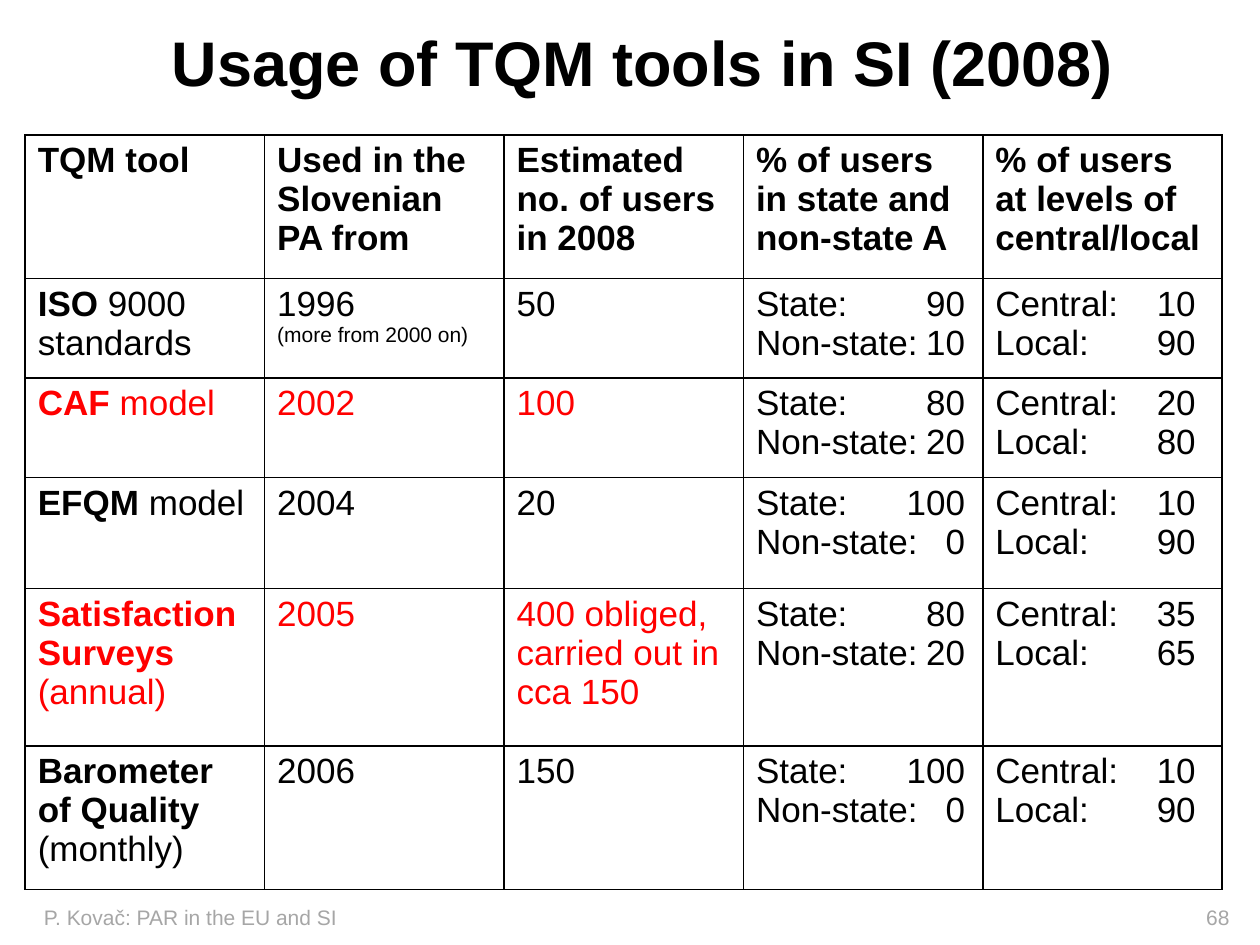
"""Build the slide on usage of TQM tools in Slovenia."""
from dataclasses import dataclass

from lxml import etree
from pptx import Presentation
from pptx.dml.color import RGBColor
from pptx.enum.text import MSO_ANCHOR, PP_ALIGN
from pptx.oxml.ns import qn
from pptx.slide import Slide
from pptx.util import Inches, Pt

CENTER = PP_ALIGN.CENTER
LEFT = PP_ALIGN.LEFT
MIDDLE = MSO_ANCHOR.MIDDLE
WIDTH, HEIGHT = 10, 7.5
COLORS = {"black": "000000", "red": "FF0000", "grey": "A6A6A6", "white": "FFFFFF"}
ROW_HEIGHTS = [1.14, 0.79, 0.79, 0.88, 1.25, 1.14]
HEADERS = [
    "*TQM tool*",
    "*Used in the*\n*Slovenian*\n*PA from*",
    "*Estimated*\n*no. of users*\n*in 2008*",
    "*% of users*\n*in state and*\n*non-state A*",
    "*% of users*\n*at levels of*\n*central/local*",
]
TOOLS = [
    ("*ISO* 9000\nstandards", "1996\n(more from 2000 on)", "50", 90, 10, 10, 90, "black"),
    ("*CAF* model", "2002", "100", 80, 20, 20, 80, "red"),
    ("*EFQM* model", "2004", "20", 100, 0, 10, 90, "black"),
    ("*Satisfaction*\n*Surveys*\n(annual)", "2005",
     "400 obliged,\ncarried out in\ncca 150", 80, 20, 35, 65, "red"),
    ("*Barometer*\n*of Quality*\n(monthly)", "2006", "150", 100, 0, 10, 90, "black"),
]


@dataclass
class SlideBuilder:
    """Hold the style and the current slide, and draw its elements."""

    slide: Slide
    font: str = "Arial"
    body_size: int = 20
    small_size: int = 12

    def fill_paragraph(self, paragraph, text, size, color, tab=None):
        """Fill a paragraph, with bold between asterisks and an optional right tab."""
        for index, part in enumerate(text.split("*")):
            if part:
                run = paragraph.add_run()
                run.text = part
                run.font.name = self.font
                run.font.size = Pt(size)
                run.font.bold = index % 2 == 1
                run.font.color.rgb = RGBColor.from_string(COLORS[color])
        if tab:
            tabs = etree.SubElement(paragraph._p.get_or_add_pPr(), qn("a:tabLst"))
            etree.SubElement(tabs, qn("a:tab"), pos=str(Inches(tab)), algn="r")

    def text(self, left, top, width, height, text, size, color, align=LEFT, tab=None):
        """Add a one-line text box placed by shares of the slide."""
        box = self.slide.shapes.add_textbox(
            Inches(left * WIDTH), Inches(top * HEIGHT),
            Inches(width * WIDTH), Inches(height * HEIGHT))
        frame = box.text_frame
        frame.word_wrap = True
        frame.vertical_anchor = MIDDLE
        frame.paragraphs[0].alignment = align
        self.fill_paragraph(frame.paragraphs[0], text, size, color, tab)

    def border(self, cell):
        """Draw a thin black line on each side of a cell."""
        properties = cell._tc.get_or_add_tcPr()
        for index, side in enumerate(("lnL", "lnR", "lnT", "lnB")):
            line = etree.Element(qn(f"a:{side}"), w=str(Pt(1)))
            fill = etree.SubElement(line, qn("a:solidFill"))
            etree.SubElement(fill, qn("a:srgbClr"), val=COLORS["black"])
            properties.insert(index, line)

    def cell(self, cell, text, color, tab=None):
        """Fill a table cell, one paragraph per line."""
        cell.fill.solid()
        cell.fill.fore_color.rgb = RGBColor.from_string(COLORS["white"])
        self.border(cell)
        frame = cell.text_frame
        for index, line in enumerate(text.split("\n")):
            paragraph = frame.add_paragraph() if index else frame.paragraphs[0]
            size = self.small_size if line.startswith("(more") else self.body_size
            self.fill_paragraph(paragraph, line, size, color, tab)

    def table(self, left, top, width, row_heights, rows):
        """Add a table with equal columns from rows of (text, color, tab)."""
        columns = len(rows[0])
        table = self.slide.shapes.add_table(
            len(rows), columns, Inches(left * WIDTH), Inches(top * HEIGHT),
            Inches(width * WIDTH), Inches(sum(row_heights))).table
        table.first_row = table.horz_banding = False
        for table_row, height, row in zip(table.rows, row_heights, rows):
            table_row.height = Inches(height)
            for cell, content in zip(table_row.cells, row):
                self.cell(cell, *content)


def tool_row(name, year, users, state, non_state, central, local, color):
    """Return the cells of one tool."""
    return [
        (name, color), (year, color), (users, color),
        (f"State:\t{state}\nNon-state:\t{non_state}", "black", 1.66),
        (f"Central:\t{central}\nLocal:\t{local}", "black", 1.59),
    ]


def main():
    """Build and save the presentation."""
    presentation = Presentation()
    presentation.slide_width = Inches(WIDTH)
    presentation.slide_height = Inches(HEIGHT)
    builder = SlideBuilder(presentation.slides.add_slide(presentation.slide_layouts[6]))
    builder.text(0.04, 0.02, 0.94, 0.09, "*Usage of TQM tools in SI (2008)*",
                 36, "black", CENTER)
    rows = [[(header, "black") for header in HEADERS]]
    rows += [tool_row(*tool) for tool in TOOLS]
    builder.table(0.02, 1.07 / HEIGHT, 0.95, ROW_HEIGHTS, rows)
    builder.text(0.25 / WIDTH, 0.94, 0.97, 0.06, "P. Kovač: PAR in the EU and SI\t68",
                 builder.small_size, "grey", tab=9.41)
    presentation.save("out.pptx")


if __name__ == "__main__":
    main()
